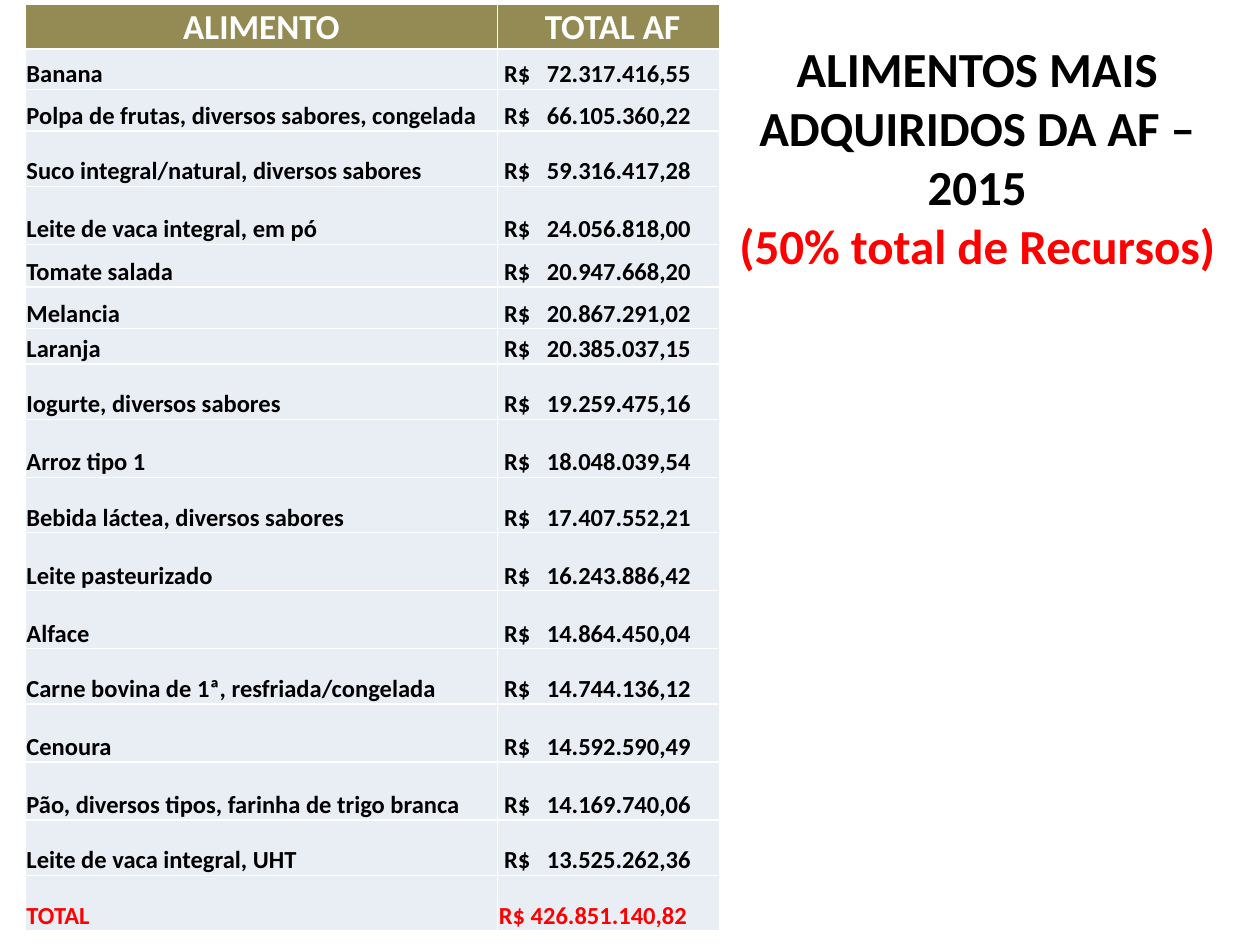
from lxml import etree
from pptx import Presentation
from pptx.dml.color import RGBColor
from pptx.enum import text
from pptx.oxml import ns
from pptx.util import Inches, Pt

COLORS = {"header": "948A54", "body": "E9EDF4", "white": "FFFFFF",
          "black": "000000", "red": "FF0000"}
FOODS = [
    ("Banana", "72.317.416,55", 0.32),
    ("Polpa de frutas, diversos sabores, congelada", "66.105.360,22", 0.33),
    ("Suco integral/natural, diversos sabores", "59.316.417,28", 0.44),
    ("Leite de vaca integral, em pó", "24.056.818,00", 0.46),
    ("Tomate salada", "20.947.668,20", 0.34),
    ("Melancia", "20.867.291,02", 0.33),
    ("Laranja", "20.385.037,15", 0.28),
    ("Iogurte, diversos sabores", "19.259.475,16", 0.44),
    ("Arroz tipo 1", "18.048.039,54", 0.46),
    ("Bebida láctea, diversos sabores", "17.407.552,21", 0.44),
    ("Leite pasteurizado", "16.243.886,42", 0.46),
    ("Alface", "14.864.450,04", 0.46),
    ("Carne bovina de 1ª, resfriada/congelada", "14.744.136,12", 0.44),
    ("Cenoura", "14.592.590,49", 0.46),
    ("Pão, diversos tipos, farinha de trigo branca", "14.169.740,06", 0.46),
    ("Leite de vaca integral, UHT", "13.525.262,36", 0.44),
]


def add_run(paragraph, words, size, color):
    run = paragraph.add_run()
    run.text = words
    run.font.name = "Calibri"
    run.font.size = Pt(size)
    run.font.bold = True
    run.font.color.rgb = RGBColor.from_string(COLORS[color])


def fill_cell(cell, words, size, color, fill):
    cell.margin_left = cell.margin_right = cell.margin_top = Inches(0.01)
    cell.margin_bottom = 0
    cell.vertical_anchor = text.MSO_ANCHOR.BOTTOM
    add_run(cell.text_frame.paragraphs[0], words, size, color)
    properties = cell._tc.get_or_add_tcPr()
    for side in ("a:lnL", "a:lnR", "a:lnT", "a:lnB"):
        border = etree.SubElement(properties, ns.qn(side), w=str(Pt(1)))
        solid = etree.SubElement(border, ns.qn("a:solidFill"))
        etree.SubElement(solid, ns.qn("a:srgbClr"), val=COLORS["white"])
    cell.fill.solid()
    cell.fill.fore_color.rgb = RGBColor.from_string(COLORS[fill])


prs = Presentation()
prs.slide_width, prs.slide_height = Inches(10), Inches(7.5)
slide = prs.slides.add_slide(prs.slide_layouts[6])

title = slide.shapes.add_textbox(Inches(5.71), Inches(0.36), Inches(4.09), Inches(1.76))
title.text_frame.word_wrap = True
title.text_frame.vertical_anchor = text.MSO_ANCHOR.MIDDLE
heading = title.text_frame.paragraphs[0]
heading.alignment = text.PP_ALIGN.CENTER
add_run(heading, "ALIMENTOS MAIS ADQUIRIDOS DA AF – 2015", 28, "black")
heading.add_line_break()
add_run(heading, "(50% total de Recursos)", 28, "red")

heights = [0.36] + [height for _, _, height in FOODS] + [0.44]
purchases = slide.shapes.add_table(len(heights), 2, Inches(0.2), Inches(0.03),
                                   Inches(5.51), Inches(7.34)).table
for column, width in zip(purchases.columns, (3.75, 1.76)):
    column.width = Inches(width)
for row, height in zip(purchases.rows, heights):
    row.height = Inches(height)

for column, label in enumerate(("ALIMENTO", " TOTAL AF")):
    header = purchases.cell(0, column)
    fill_cell(header, label, 20, "white", "header")
    header.text_frame.paragraphs[0].alignment = text.PP_ALIGN.CENTER
purchases.cell(0, 0).vertical_anchor = text.MSO_ANCHOR.MIDDLE

for row, (food, amount, _) in enumerate(FOODS, start=1):
    fill_cell(purchases.cell(row, 0), food, 14, "black", "body")
    value = purchases.cell(row, 1)
    fill_cell(value, f"R$\t{amount}", 14, "black", "body")
    value.margin_left = Inches(0.05)
    paragraph_properties = value.text_frame.paragraphs[0]._p.get_or_add_pPr()
    tabs = etree.SubElement(paragraph_properties, ns.qn("a:tabLst"))
    etree.SubElement(tabs, ns.qn("a:tab"), pos=str(Inches(0.34)), algn="l")

for column, label in enumerate(("TOTAL", "R$ 426.851.140,82")):
    fill_cell(purchases.cell(len(heights) - 1, column), label, 14, "red", "body")

prs.save("out.pptx")
